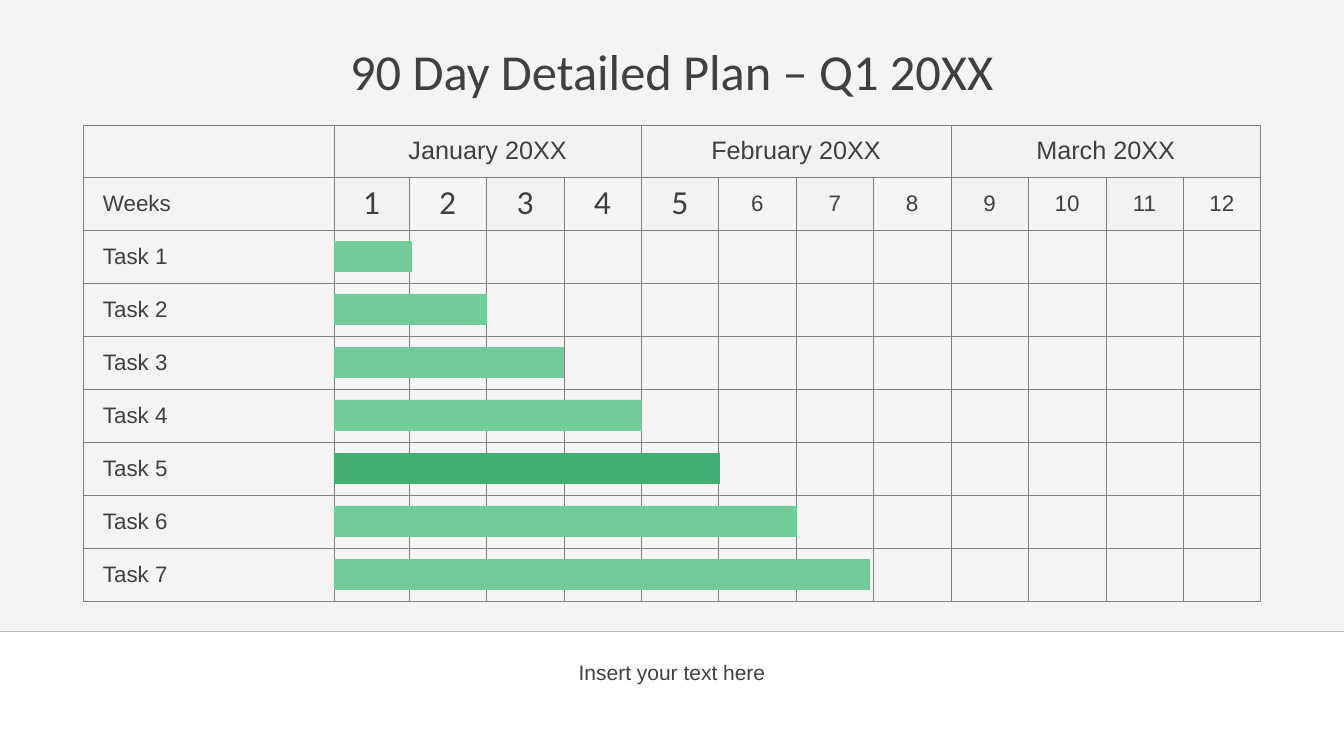
from lxml.etree import SubElement
from pptx import Presentation
from pptx.dml.color import RGBColor
from pptx.enum.shapes import MSO_CONNECTOR, MSO_SHAPE
from pptx.enum.text import MSO_ANCHOR, MSO_AUTO_SIZE, PP_ALIGN
from pptx.oxml.ns import qn
from pptx.util import Pt

WIDE, HIGH = 1344, 756
SCALE = 12192000 / WIDE

COLORS = {
    "text": "404040",
    "panel": "D9D9D9",
    "rule": "BFBFBF",
    "grid": "808080",
    "shade": "F2F2F2",
    "white": "FFFFFF",
    "task": "73CB9B",
    "focus": "41AE72",
}
MONTHS = ["January 20XX", "February 20XX", "March 20XX"]
WEEKS = 12
SPAN = WEEKS // len(MONTHS)
BARS = [78, 153, 230, 308, 386, 463, 536]
FOCUS = 5
LABEL, FIRST = 251, 75
HEAD, ROW = 52, 53
BAR = 31


def px(count):
    return round(count * SCALE)


def rgb(name):
    return RGBColor.from_string(COLORS[name])


def paint(fill, name):
    fill.solid()
    fill.fore_color.rgb = rgb(name)


def fade(element, share):
    """Give the fill colour of an element an opacity in percent."""
    color = element.find(qn("a:solidFill")).find(qn("a:srgbClr"))
    SubElement(color, qn("a:alpha"), val=str(share * 1000))


def write(frame, text, size, font="Arial", align=PP_ALIGN.CENTER):
    frame.text = text
    par = frame.paragraphs[0]
    par.alignment = align
    for run in par.runs:
        run.font.size = Pt(size)
        run.font.name = font
        run.font.bold = False
        run.font.color.rgb = rgb("text")


def inset(frame, side, edge):
    frame.margin_left = frame.margin_right = px(side)
    frame.margin_top = frame.margin_bottom = px(edge)


def add_rect(slide, box, color):
    rect = slide.shapes.add_shape(MSO_SHAPE.RECTANGLE, *map(px, box))
    rect.shadow.inherit = False
    rect.line.fill.background()
    paint(rect.fill, color)
    return rect


def add_panel(slide, box):
    """Lay the grey panel behind the title and rule off its lower edge."""
    left, top, width, height = box
    panel = add_rect(slide, box, "panel").element
    fade(panel.spPr, 28)
    panel.getparent().insert(2, panel)
    base = top + height
    rule = slide.shapes.add_connector(
        MSO_CONNECTOR.STRAIGHT, *map(px, (left, base, left + width, base)))
    rule.line.color.rgb = rgb("rule")
    rule.line.width = Pt(0.25)
    SubElement(rule.element.spPr, qn("a:effectLst"))


def add_title(slide, box):
    title = slide.shapes.title
    title.left, title.top, title.width, title.height = map(px, box)
    frame = title.text_frame
    frame.auto_size = MSO_AUTO_SIZE.NONE
    frame.vertical_anchor = MSO_ANCHOR.MIDDLE
    inset(frame, 0, 7)
    write(frame, "90 Day Detailed Plan – Q1 20XX", 36, "Calibri")


def frame_cell(cell):
    props = cell._tc.get_or_add_tcPr()
    for side in ("lnL", "lnR", "lnT", "lnB"):
        line = SubElement(props, qn(f"a:{side}"), w=str(Pt(0.25)))
        solid = SubElement(line, qn("a:solidFill"))
        SubElement(solid, qn("a:srgbClr"), val=COLORS["grid"])


def tint(cell, row, col):
    """Shade months and odd weeks, veil the other cells, leave labels clear."""
    if col == 0:
        cell.fill.background()
    elif row == 0 or row == 1 and col % 2:
        paint(cell.fill, "shade")
    else:
        paint(cell.fill, "white")
        fade(cell._tc.tcPr, 15 if row == 1 else 11)


def add_grid(slide, box):
    left, top, width, height = box
    table = slide.shapes.add_table(
        len(BARS) + 2, WEEKS + 1, *map(px, box)).table
    table.first_row = table.horz_banding = False

    start = LABEL + FIRST
    step = (width - start) / (WEEKS - 1)
    edges = [0, LABEL] + [start + step * week for week in range(WEEKS)]
    for col, (near, far) in zip(table.columns, zip(edges, edges[1:])):
        col.width = px(far - near)
    for index, row in enumerate(table.rows):
        row.height = px(ROW if index else HEAD)
        for col, cell in enumerate(row.cells):
            cell.vertical_anchor = MSO_ANCHOR.MIDDLE
            frame_cell(cell)
            tint(cell, index, col)

    for index, month in enumerate(MONTHS):
        col = 1 + index * SPAN
        cell = table.cell(0, col)
        cell.merge(table.cell(0, col + SPAN - 1))
        inset(cell, 0, 5)
        write(cell.text_frame, month, 18)
    for week in range(1, WEEKS + 1):
        style = (24, "Calibri") if week <= 5 else (16, "Arial")
        write(table.cell(1, week).text_frame, str(week), *style)
    labels = ["Weeks"] + [f"Task {n}" for n in range(1, len(BARS) + 1)]
    for row, label in enumerate(labels, 1):
        cell = table.cell(row, 0)
        cell.margin_left = px(20)
        write(cell.text_frame, label, 16, align=PP_ALIGN.LEFT)


def add_bars(slide, box):
    """Draw one bar per task, centred in its row of the grid."""
    left, top = box[:2]
    start = top + HEAD + ROW + (ROW - BAR) // 2
    for index, length in enumerate(BARS):
        color = "focus" if index + 1 == FOCUS else "task"
        add_rect(slide, (left + LABEL, start + index * ROW, length, BAR), color)


def add_note(slide, box):
    frame = slide.shapes.add_textbox(*map(px, box)).text_frame
    frame.word_wrap = True
    inset(frame, 0, 0)
    write(frame, "Insert your text here", 15)


def main():
    deck = Presentation()
    deck.slide_width, deck.slide_height = px(WIDE), px(HIGH)
    slide = deck.slides.add_slide(deck.slide_layouts[5])
    grid = (83, 125, 1178, HEAD + ROW * (len(BARS) + 1))
    add_panel(slide, (0, 0, WIDE, 631))
    add_title(slide, (67, 31, 1210, 78))
    add_grid(slide, grid)
    add_bars(slide, grid)
    add_note(slide, (70, 660, 1204, 25))
    deck.save("out.pptx")


if __name__ == "__main__":
    main()
